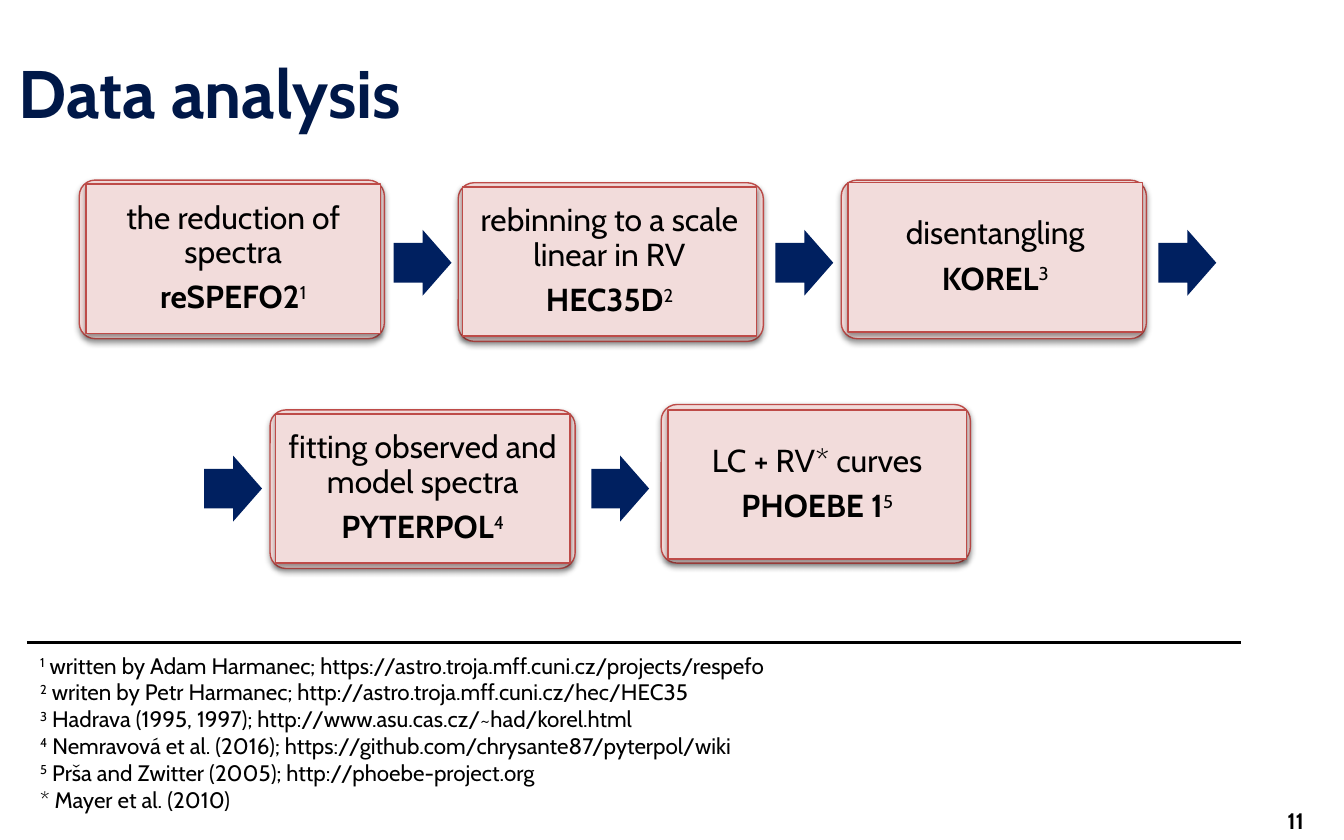
"""Build the data analysis slide: a five-step workflow with footnotes."""
from lxml import etree
from pptx import Presentation
from pptx import util as u
from pptx.dml.color import RGBColor
from pptx.enum import shapes, text
from pptx.oxml.ns import qn

THEME = {
    "font": "Cabin",
    "black": RGBColor.from_string("000000"),
    "title": RGBColor.from_string("001848"),
    "arrow": RGBColor.from_string("002060"),
    "card": RGBColor.from_string("F2DCDB"),
    "edge": RGBColor.from_string("BE4B48"),
    "title_size": u.Pt(36),
    "card_size": u.Pt(17),
    "note_size": u.Pt(12),
}
CENTER, LEFT, RIGHT = text.PP_ALIGN.CENTER, text.PP_ALIGN.LEFT, text.PP_ALIGN.RIGHT
MIDDLE, TOP = text.MSO_ANCHOR.MIDDLE, text.MSO_ANCHOR.TOP


def write_text(shape, paragraphs, size, color, anchor, insets, spacing):
    """Fill a shape with paragraphs made of (words, bold, raised) runs."""
    frame = shape.text_frame
    frame_format = {"word_wrap": True, "auto_size": text.MSO_AUTO_SIZE.NONE,
                    "vertical_anchor": anchor}
    for side, inset in zip(("left", "top", "right", "bottom"), insets):
        frame_format[f"margin_{side}"] = u.Inches(inset)
    for name, value in frame_format.items():
        setattr(frame, name, value)
    for index, runs in enumerate(paragraphs):
        paragraph = frame.add_paragraph() if index else frame.paragraphs[0]
        for name, value in spacing.items():
            setattr(paragraph, name, value)
        for words, bold, raised in runs:
            run = paragraph.add_run()
            run.text = words
            run_format = {"name": THEME["font"], "size": size, "bold": bold}
            for name, value in run_format.items():
                setattr(run.font, name, value)
            run.font.color.rgb = color
            if raised:
                run._r.get_or_add_rPr().set("baseline", "30000")


def add_card_layer(slide, kind, left, top, width, height):
    """Add one outlined, softly shadowed layer of a step card."""
    shape = slide.shapes.add_shape(kind, *map(u.Inches, (left, top, width, height)))
    shape.fill.solid()
    shape.fill.fore_color.rgb = THEME["card"]
    shape.line.color.rgb = THEME["edge"]
    shape.line.width = u.Pt(0.75)
    shape.shadow.inherit = False
    effects = shape._element.spPr.find(qn("a:effectLst"))
    shadow = etree.SubElement(effects, qn("a:outerShdw"), blurRad=str(u.Pt(3.1)),
                              dist=str(u.Pt(1.6)), dir="5400000", rotWithShape="0")
    tint = etree.SubElement(shadow, qn("a:srgbClr"), val="000000")
    etree.SubElement(tint, qn("a:alpha"), val="38000")
    return shape


presentation = Presentation()
presentation.slide_width = u.Inches(10)
presentation.slide_height = u.Inches(6.25)
slide = presentation.slides.add_slide(presentation.slide_layouts[5])

title = slide.shapes.title
title_place = {"left": 0.04, "top": 0.29, "width": 10, "height": 0.79}
for name, value in title_place.items():
    setattr(title, name, u.Inches(value))
write_text(title, [[("Data analysis", True, False)]], THEME["title_size"],
           THEME["title"], MIDDLE, (0.1, 0.05, 0.1, 0.05), {"alignment": LEFT})

steps = [
    (0.59, 1.34, 2.27, 0.05, 0.03, "the reduction of spectra", "reSPEFO2"),
    (3.41, 1.36, 2.27, 0.03, 0.03, "rebinning to a scale linear in RV", "HEC35D"),
    (6.26, 1.34, 2.27, 0.05, 0.02, "disentangling", "KOREL"),
    (2.01, 3.05, 2.27, 0.04, 0.03, "fitting observed and model spectra", "PYTERPOL"),
    (4.92, 3.01, 2.3, 0.05, 0.04, "LC + RV* curves", "PHOEBE 1"),
]
step_spacing = {"alignment": CENTER, "line_spacing": 0.9, "space_after": u.Pt(6)}
for number, (left, top, width, inset_x, inset_y, task, tool) in enumerate(steps, 1):
    back = add_card_layer(slide, shapes.MSO_SHAPE.ROUNDED_RECTANGLE, left, top, width, 1.18)
    back.adjustments[0] = 0.1
    front = add_card_layer(slide, shapes.MSO_SHAPE.RECTANGLE, left + inset_x,
                           top + inset_y, width - 0.08, 1.11)
    write_text(front, [[(task, False, False)],
                       [(tool, True, False), (str(number), False, True)]],
               THEME["card_size"], THEME["black"], MIDDLE, (0.08,) * 4, step_spacing)

for left, top in [(2.93, 1.71), (5.77, 1.71), (8.62, 1.71), (1.52, 3.39), (4.4, 3.39)]:
    arrow = slide.shapes.add_shape(shapes.MSO_SHAPE.RIGHT_ARROW, u.Inches(left),
                                   u.Inches(top), u.Inches(0.43), u.Inches(0.49))
    arrow.adjustments[0] = 0.6
    arrow.adjustments[1] = 0.5
    arrow.fill.solid()
    arrow.fill.fore_color.rgb = THEME["arrow"]
    arrow.line.fill.background()
    arrow.shadow.inherit = False

rule = slide.shapes.add_connector(shapes.MSO_CONNECTOR.STRAIGHT, u.Inches(0.2),
                                  u.Inches(4.78), u.Inches(9.23), u.Inches(4.78))
rule.line.color.rgb = THEME["black"]
rule.line.width = u.Pt(1.5)
etree.SubElement(rule._element.spPr, qn("a:effectLst"))

sources = [
    "written by Adam Harmanec; https://astro.troja.mff.cuni.cz/projects/respefo",
    "writen by Petr Harmanec; http://astro.troja.mff.cuni.cz/hec/HEC35",
    "Hadrava (1995, 1997); http://www.asu.cas.cz/~had/korel.html",
    "Nemravová et al. (2016); https://github.com/chrysante87/pyterpol/wiki",
    "Prša and Zwitter (2005); http://phoebe-project.org",
]
notes = [[(str(number), False, True), (f" {source}", False, False)]
         for number, source in enumerate(sources, 1)]
notes.append([("* Mayer et al. (2010)", False, False)])
footnotes = slide.shapes.add_textbox(*map(u.Inches, (0.2, 4.8, 9.04, 1.5)))
write_text(footnotes, notes, THEME["note_size"], THEME["black"], TOP,
           (0.1, 0.05, 0.1, 0.05), {"alignment": LEFT})

page_number = slide.shapes.add_textbox(*map(u.Inches, (7.47, 5.94, 2.33, 0.33)))
write_text(page_number, [[("11", True, False)]], THEME["note_size"], THEME["black"],
           MIDDLE, (0.1, 0.05, 0.1, 0.05), {"alignment": RIGHT})

presentation.save("out.pptx")
